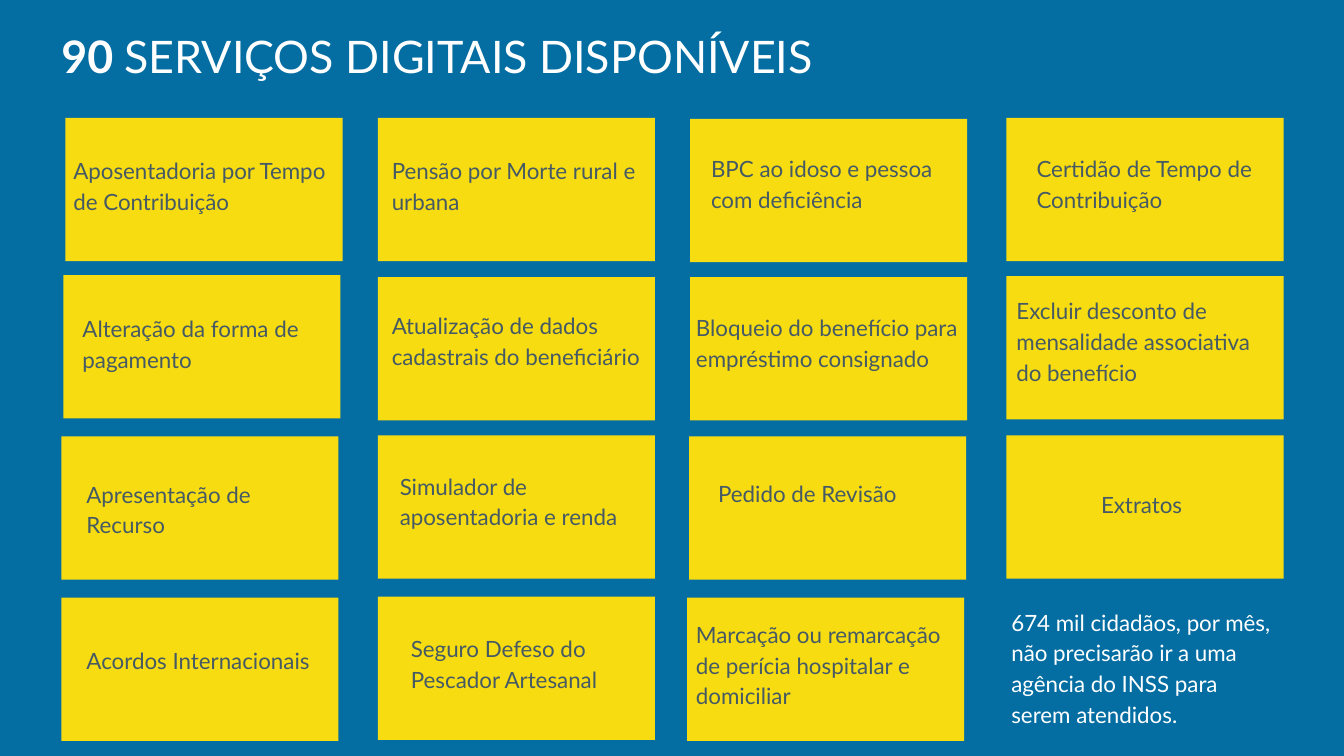
from pptx import Presentation
from pptx import util as u
from pptx.dml.color import RGBColor
from pptx.enum import shapes, text

PX = 9144  # 100 px to the inch
SLIDE_WIDTH, SLIDE_HEIGHT = 1334, 750
FONT = "Lato"
BLUE, YELLOW, SLATE, WHITE = "046EA3", "F8DC12", "455A64", "FFFFFF"

# Card grid
COLUMNS = (63, 375, 685, 999)
ROWS = (117, 275, 433, 593)
CARD_WIDTH, CARD_HEIGHT = 275, 142
LABEL_WIDTH, LABEL_HEIGHT = 315, 81

# Each card: nudge from the grid, label offset in the card, label width, paragraphs
SERVICES = (
    (
        ((2, 0), (-2, 30), LABEL_WIDTH, ["Aposentadoria por Tempo", "de Contribuição"]),
        ((0, 0), (4, 30), LABEL_WIDTH, ["Pensão por Morte rural e urbana"]),
        ((0, 1), (11, 27), 247, ["BPC ao idoso e pessoa", "com deficiência"]),
        ((0, 0), (20, 28), LABEL_WIDTH, ["Certidão de Tempo de Contribuição"]),
    ),
    (
        ((0, -2), (9, 31), LABEL_WIDTH, ["Alteração da forma de pagamento"]),
        ((0, 0), (4, 26), LABEL_WIDTH, ["Atualização de dados cadastrais do beneficiário"]),
        ((0, 0), (-4, 28), 288, ["Bloqueio do benefício para empréstimo consignado"]),
        ((0, -1), (0, 12), 271, ["Excluir desconto de mensalidade associativa do benefício"]),
    ),
    (
        ((-2, 0), (15, 35), 264, ["Apresentação de Recurso"]),
        ((0, -1), (12, 28), 243, ["Simulador de aposentadoria e renda"]),
        ((-1, 0), (19, 34), LABEL_WIDTH, ["Pedido de Revisão"]),
        ((0, -1), (84, 46), LABEL_WIDTH, ["Extratos"]),
    ),
    (
        ((-2, 0), (15, 40), LABEL_WIDTH, ["Acordos Internacionais"]),
        ((0, -1), (23, 29), LABEL_WIDTH, ["Seguro Defeso do", "Pescador Artesanal"]),
        ((-3, 0), (-1, 14), LABEL_WIDTH,
         ["Marcação ou remarcação", "de perícia hospitalar e domiciliar"]),
    ),
)


def color(hex_value):
    return RGBColor.from_string(hex_value)


def emu(*lengths):
    return [length * PX for length in lengths]


def set_all(target, values):
    for name, value in values.items():
        setattr(target, name, value)


def format_frame(frame):
    set_all(frame, {
        "word_wrap": True,
        "auto_size": text.MSO_AUTO_SIZE.NONE,
        "vertical_anchor": text.MSO_ANCHOR.TOP,
        "margin_left": 10 * PX, "margin_right": 10 * PX,
        "margin_top": 5 * PX, "margin_bottom": 5 * PX,
    })


def add_run(paragraph, words, size, hex_value, bold=False):
    run = paragraph.add_run()
    run.text = words
    set_all(run.font, {"name": FONT, "size": u.Pt(size), "bold": bold})
    run.font.color.rgb = color(hex_value)


def add_title(slide, left, top, width, height):
    title = slide.shapes.title
    set_all(title, dict(zip(("left", "top", "width", "height"),
                            emu(left, top, width, height))))
    format_frame(title.text_frame)
    paragraph = title.text_frame.paragraphs[0]
    paragraph.alignment = text.PP_ALIGN.LEFT
    add_run(paragraph, "90 ", 32, WHITE, bold=True)
    add_run(paragraph, "SERVIÇOS DIGITAIS DISPONÍVEIS", 32, WHITE)


def add_label(slide, left, top, width, height, lines, hex_value):
    frame = slide.shapes.add_textbox(*emu(left, top, width, height)).text_frame
    format_frame(frame)
    for index, line in enumerate(lines):
        paragraph = frame.add_paragraph() if index else frame.paragraphs[0]
        set_all(paragraph, {"line_spacing": 1.15, "alignment": text.PP_ALIGN.LEFT})
        add_run(paragraph, line, 16, hex_value)


def add_card(slide, left, top, label_offset, label_width, lines):
    card = slide.shapes.add_shape(shapes.MSO_SHAPE.RECTANGLE,
                                  *emu(left, top, CARD_WIDTH, CARD_HEIGHT))
    card.shadow.inherit = False
    card.fill.solid()
    card.fill.fore_color.rgb = color(YELLOW)
    card.line.fill.background()
    offset_x, offset_y = label_offset
    add_label(slide, left + offset_x, top + offset_y, label_width, LABEL_HEIGHT,
              lines, SLATE)


def add_service_grid(slide):
    for row_top, row in zip(ROWS, SERVICES):
        for column_left, (nudge, offset, width, lines) in zip(COLUMNS, row):
            add_card(slide, column_left + nudge[0], row_top + nudge[1],
                     offset, width, lines)


def main():
    presentation = Presentation()
    presentation.slide_width, presentation.slide_height = emu(SLIDE_WIDTH, SLIDE_HEIGHT)
    slide = presentation.slides.add_slide(presentation.slide_layouts.get_by_name("Title Only"))

    # Background
    slide.background.fill.solid()
    slide.background.fill.fore_color.rgb = color(BLUE)

    # Title, service cards and closing note
    add_title(slide, 51, 23, 1189, 70)
    add_service_grid(slide)
    add_label(slide, 994, 595, 286, LABEL_HEIGHT,
              ["674 mil cidadãos, por mês, não precisarão ir a uma agência do INSS "
               "para serem atendidos."], WHITE)

    presentation.save("out.pptx")


if __name__ == "__main__":
    main()
